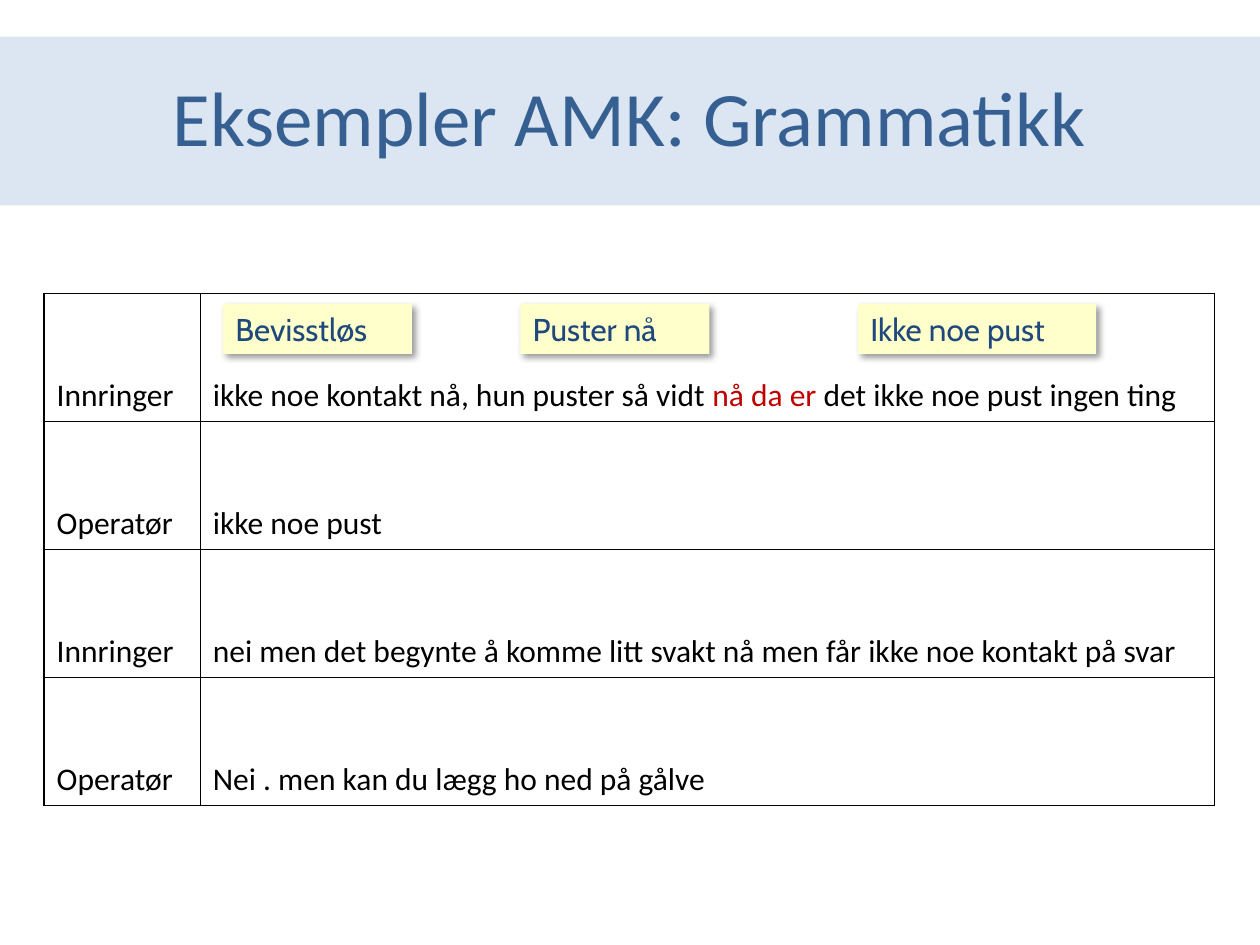
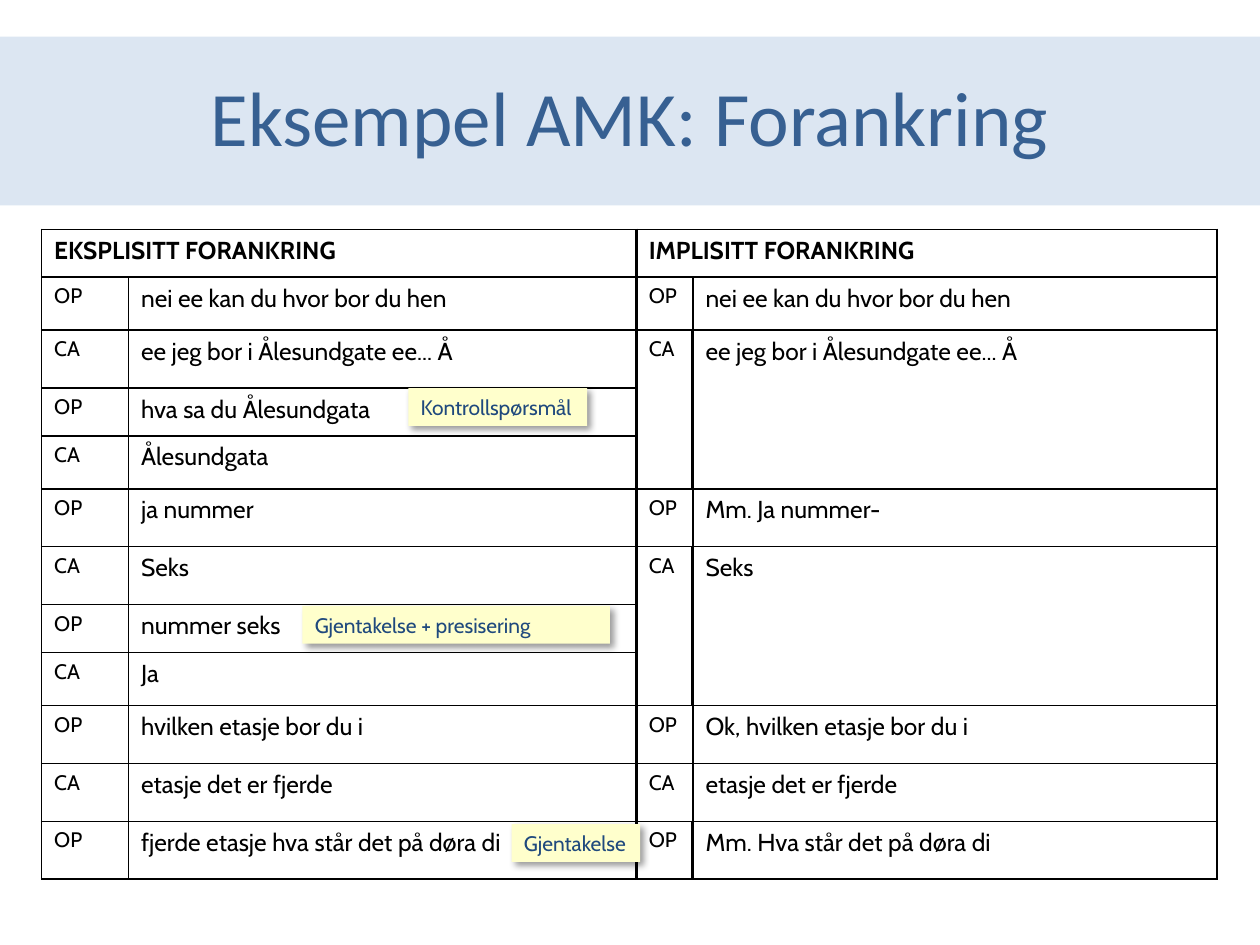
from lxml import etree
from pptx import Presentation
from pptx.dml.color import RGBColor
from pptx.enum.shapes import MSO_SHAPE as Shape
from pptx.enum.text import MSO_ANCHOR as Anchor, MSO_AUTO_SIZE as AutoSize, PP_ALIGN as Align
from pptx.oxml import parse_xml
from pptx.oxml.ns import nsdecls, qn
from pptx.util import Inches, Pt

BAND, TITLE = "DCE6F2", "376092"
NOTE, NOTE_TEXT = "FFFFCC", "1F497D"
BLACK, RED = "000000", "C00000"


def rgb(color):
    return RGBColor.from_string(color)


def write(tf, text, size=18, font="Calibri", color=BLACK, bold=False,
          align=Align.LEFT):
    """Fill a frame with a string, or with a list of (string, colour) runs."""
    p = tf.paragraphs[0]
    p.alignment = align
    for words, run_color in [(text, color)] if isinstance(text, str) else text:
        r = p.add_run()
        r.text = words
        r.font.size, r.font.name, r.font.bold = Pt(size), font, bold
        r.font.color.rgb = rgb(run_color)


def set_borders(cell, widths):
    """Draw black cell edges; widths are points for left, right, top, bottom."""
    tc_pr = cell._tc.get_or_add_tcPr()
    for i, (side, width) in enumerate(zip("LRTB", widths)):
        line = parse_xml(
            f'<a:ln{side} {nsdecls("a")} w="{Pt(width)}"><a:solidFill>'
            f'<a:srgbClr val="{BLACK}"/></a:solidFill></a:ln{side}>')
        tc_pr.insert(i, line)


def add_shadow(sp):
    effects = sp._element.spPr.find(qn("a:effectLst"))
    shadow = etree.SubElement(effects, qn("a:outerShdw"), blurRad=str(Pt(4)),
                              dist=str(Pt(3)), dir=str(45 * 60000),
                              algn="tl", rotWithShape="0")
    color = etree.SubElement(shadow, qn("a:srgbClr"), val=BLACK)
    etree.SubElement(color, qn("a:alpha"), val="40000")


class Deck:
    def __init__(self):
        self.prs = Presentation()
        self.prs.slide_width, self.prs.slide_height = Inches(10), Inches(7.5)
        self.shapes = None

    def slide(self, title):
        """Start a slide with its band and title."""
        self.shapes = self.prs.slides.add_slide(self.prs.slide_layouts[6]).shapes
        self.box(0, 0.29, 10, 1.34, BAND)
        tf = self.shapes.add_textbox(
            Inches(0.5), Inches(0.3), Inches(9), Inches(1.24)).text_frame
        tf.word_wrap = True
        tf.auto_size = AutoSize.NONE
        tf.vertical_anchor = Anchor.MIDDLE
        write(tf, title, size=44, color=TITLE, align=Align.CENTER)

    def box(self, x, y, w, h, fill):
        sp = self.shapes.add_shape(
            Shape.RECTANGLE, Inches(x), Inches(y), Inches(w), Inches(h))
        sp.shadow.inherit = False
        sp.fill.solid()
        sp.fill.fore_color.rgb = rgb(fill)
        sp.line.fill.background()
        return sp

    def note(self, text, x, y, w, h, size):
        sp = self.box(x, y, w, h, NOTE)
        add_shadow(sp)
        tf = sp.text_frame
        tf.word_wrap = True
        tf.auto_size = AutoSize.SHAPE_TO_FIT_TEXT
        tf.vertical_anchor = Anchor.TOP
        write(tf, text, size=size, font="Cabin", color=NOTE_TEXT)

    def table(self, x, y, widths, heights, anchor=Anchor.TOP, thick=()):
        """Add an empty ruled table; thick holds (row, edge) pairs drawn at 2 pt."""
        table = self.shapes.add_table(
            len(heights), len(widths), Inches(x), Inches(y),
            Inches(sum(widths)), Inches(sum(heights))).table
        table.first_row = table.horz_banding = False
        for col, width in zip(table.columns, widths):
            col.width = Inches(width)
        for i, height in enumerate(heights):
            table.rows[i].height = Inches(height)
            for j in range(len(widths)):
                cell = table.cell(i, j)
                cell.fill.background()
                cell.vertical_anchor = anchor
                left, right = (2 if (i, edge) in thick else 1 for edge in (j, j + 1))
                set_borders(cell, (left, right, 1, 1))
        return table


def grammar_slide(deck):
    deck.slide("Eksempler AMK: Grammatikk")
    turns = [
        ("Innringer", [("ikke noe kontakt nå, hun puster så vidt ", BLACK),
                       ("nå da er ", RED),
                       ("det ikke noe pust ingen ting", BLACK)]),
        ("Operatør", "ikke noe pust"),
        ("Innringer", "nei men det begynte å komme litt svakt nå "
                      "men får ikke noe kontakt på svar"),
        ("Operatør", "Nei . men kan du lægg ho ned på gålve"),
    ]
    table = deck.table(0.35, 2.33, [1.24, 8.05], [1.016] * len(turns), Anchor.BOTTOM)
    for i, turn in enumerate(turns):
        for j, text in enumerate(turn):
            write(table.cell(i, j).text_frame, text)
    for text, x, w in [("Bevisstløs", 1.77, 1.5), ("Puster nå", 4.13, 1.5),
                       ("Ikke noe pust", 6.81, 1.89)]:
        deck.note(text, x, 2.41, w, 0.4, 18)


def grounding_slide(deck):
    deck.slide("Eksempel AMK: Forankring")
    # Each turn: speaker, explicit wording, implicit wording (None: cell above goes on)
    turns = [
        ("OP", "nei ee kan du hvor bor du hen", "nei ee kan du hvor bor du hen"),
        ("CA", "ee jeg bor i Ålesundgate ee... Å", "ee jeg bor i Ålesundgate ee... Å"),
        ("OP", "hva sa du Ålesundgata", None),
        ("CA", "Ålesundgata", None),
        ("OP", "ja nummer", "Mm. Ja nummer-"),
        ("CA", "Seks", "Seks"),
        ("OP", "nummer seks", None),
        ("CA", "Ja", None),
        ("OP", "hvilken etasje bor du i", "Ok, hvilken etasje bor du i"),
        ("CA", "etasje det er fjerde", "etasje det er fjerde"),
        ("OP", "fjerde etasje hva står det på døra di", "Mm. Hva står det på døra di"),
    ]
    heights = [0.38, 0.42, 0.46, 0.38, 0.42, 0.46, 0.46, 0.38, 0.42] + [0.46] * 3
    thick = {(i, 2) for i in range(len(heights))}
    thick |= {(i, 3) for i in (2, 3, 4, 6, 7, 8, 11)}
    table = deck.table(0.33, 1.82, [0.69, 4.03, 0.45, 4.16], heights, thick=thick)

    for j, heading in [(0, "EKSPLISITT FORANKRING"), (2, "IMPLISITT FORANKRING")]:
        table.cell(0, j).merge(table.cell(0, j + 1))
        write(table.cell(0, j).text_frame, heading, size=14, font="Cabin", bold=True)
    for i, (speaker, explicit, implicit) in enumerate(turns, 1):
        for j, text in [(0, explicit), (2, implicit)]:
            if text:
                write(table.cell(i, j).text_frame, speaker, size=12, font="Cabin")
                write(table.cell(i, j + 1).text_frame, text, size=14, font="Cabin")
    for top in (2, 6):
        for j in (2, 3):
            table.cell(top, j).merge(table.cell(top + 2, j))

    for text, x, y, w in [("Gjentakelse + presisering", 2.4, 4.81, 2.44),
                          ("Kontrollspørsmål", 3.24, 3.08, 1.42),
                          ("Gjentakelse", 4.06, 6.54, 1.02)]:
        deck.note(text, x, y, w, 0.3, 12)


def main():
    deck = Deck()
    grammar_slide(deck)
    grounding_slide(deck)
    deck.prs.save("out.pptx")


if __name__ == "__main__":
    main()
